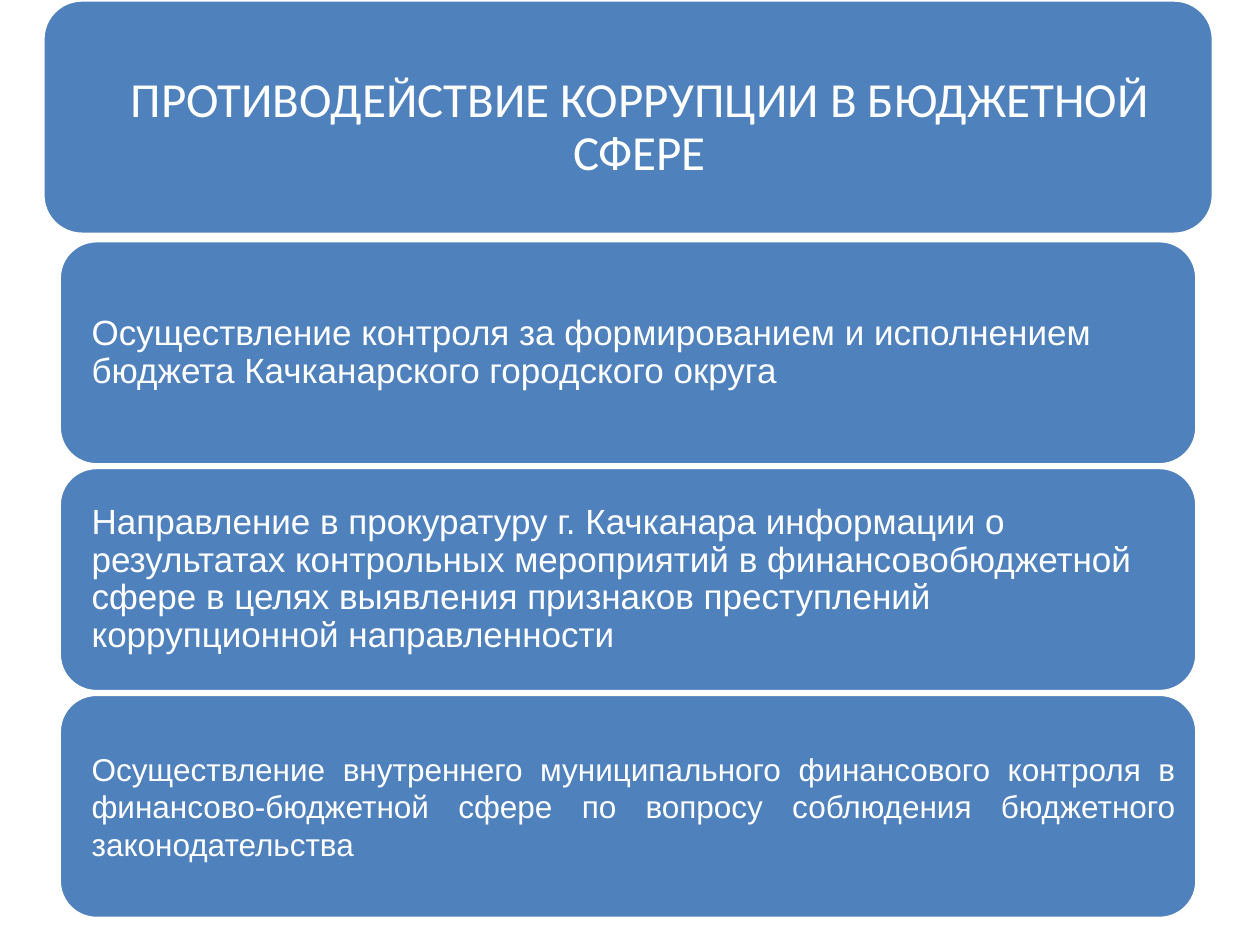
from pptx import Presentation
from pptx.dml.color import RGBColor
from pptx.enum.shapes import MSO_SHAPE as SHAPE
from pptx.enum.text import MSO_ANCHOR as ANCHOR, PP_ALIGN as ALIGN
from pptx.util import Inches, Pt

W, H = 10, 7.5
BLUE, WHITE = "4F81BD", "FFFFFF"

# Measures (inches)
TITLE_BOX = (0.34, 0, 9.29, 1.86)
LIST_BOX = (0.47, 1.91, 9.03, 5.38)
CARD_GAP = 0.02

TITLE = "ПРОТИВОДЕЙСТВИЕ КОРРУПЦИИ В БЮДЖЕТНОЙ СФЕРЕ"
MEASURES = [
    ("Осуществление контроля за формированием и исполнением бюджета "
     "Качканарского городского округа", {}),
    ("Направление в прокуратуру г. Качканара информации о результатах "
     "контрольных мероприятий в финансовобюджетной сфере в целях выявления "
     "признаков преступлений коррупционной направленности", {}),
    ("Осуществление внутреннего муниципального финансового контроля в "
     "финансово-бюджетной сфере по вопросу соблюдения бюджетного "
     "законодательства",
     dict(size=18, align=ALIGN.JUSTIFY, spacing=1.0, after=0)),
]


def color(hex_text):
    return RGBColor.from_string(hex_text)


def add_card(slide, box):
    sp = slide.shapes.add_shape(SHAPE.ROUNDED_RECTANGLE, *map(Inches, box))
    sp.shadow.inherit = False
    sp.adjustments[0] = 0.167
    sp.fill.solid()
    sp.fill.fore_color.rgb = color(BLUE)
    sp.line.color.rgb = color(WHITE)
    sp.line.width = Pt(2)
    return sp


def write(sp, text, size=20, font="Arial", align=ALIGN.LEFT, spacing=0.9,
          after=7, insets=(0.17, 0.17, 0.08, 0.17)):
    tf = sp.text_frame
    tf.word_wrap = True
    tf.vertical_anchor = ANCHOR.MIDDLE
    (tf.margin_left, tf.margin_top,
     tf.margin_right, tf.margin_bottom) = map(Inches, insets)
    p = tf.paragraphs[0]
    p.alignment = align
    p.line_spacing = spacing
    p.space_after = Pt(after)
    r = p.add_run()
    r.text = text
    r.font.size = Pt(size)
    r.font.name = font
    r.font.color.rgb = color(WHITE)


def add_title(slide, box):
    x, y, w, h = box
    add_card(slide, box)
    # The caption sits slightly right of and below the card's corner
    label = (x + 0.15, y + 0.18, w - 0.12, h - 0.18)
    sp = slide.shapes.add_textbox(*map(Inches, label))
    write(sp, TITLE, size=28, font="Calibri", align=ALIGN.CENTER, after=9.8,
          insets=(0.2,) * 4)


def add_measures(slide, box):
    x, y, w, h = box
    step = (h + CARD_GAP) / len(MEASURES)
    for i, (text, style) in enumerate(MEASURES):
        sp = add_card(slide, (x, y + i * step, w, step - CARD_GAP))
        write(sp, text, **style)


def main():
    prs = Presentation()
    prs.slide_width, prs.slide_height = Inches(W), Inches(H)
    slide = prs.slides.add_slide(prs.slide_layouts[6])
    add_measures(slide, LIST_BOX)
    add_title(slide, TITLE_BOX)
    prs.save("out.pptx")


if __name__ == "__main__":
    main()
